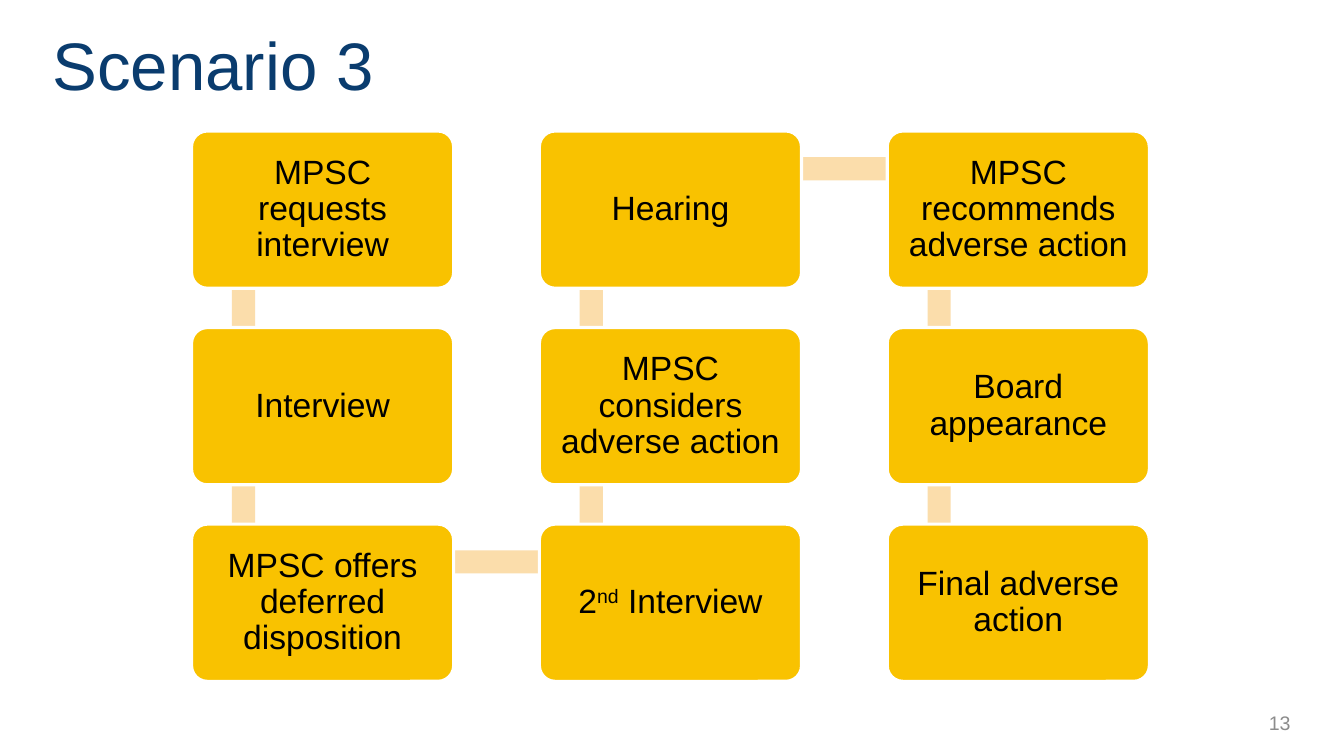
from pptx import Presentation
from pptx.dml.color import RGBColor
from pptx.enum.shapes import MSO_SHAPE
from pptx.enum.text import MSO_ANCHOR, MSO_AUTO_SIZE, PP_ALIGN
from pptx.util import Emu, Pt

RECT, ROUNDED = MSO_SHAPE.RECTANGLE, MSO_SHAPE.ROUNDED_RECTANGLE
LEFT, CENTER, RIGHT = PP_ALIGN.LEFT, PP_ALIGN.CENTER, PP_ALIGN.RIGHT
MIDDLE, NO_FIT = MSO_ANCHOR.MIDDLE, MSO_AUTO_SIZE.NONE

NAVY = RGBColor(0x0A, 0x3C, 0x6E)
GOLD = RGBColor(0xF9, 0xC2, 0x00)
CREAM = RGBColor(0xFB, 0xDD, 0xAB)
GRAY = RGBColor(0x8C, 0x8C, 0x8C)
BLACK = RGBColor(0, 0, 0)
WHITE = RGBColor(0xFF, 0xFF, 0xFF)

EMU_PER_PX = 9144  # 100 px to the inch


def px(n):
    return Emu(n * EMU_PER_PX)


class Deck:
    font = "Arial"

    def __init__(self, width, height):
        self.prs = Presentation()
        self.prs.slide_width, self.prs.slide_height = px(width), px(height)
        self.slide = None

    def add_slide(self):
        self.slide = self.prs.slides.add_slide(self.prs.slide_layouts[5])

    def add_text(self, sp, runs, size, color, align):
        tf = sp.text_frame
        tf.word_wrap, tf.auto_size, tf.vertical_anchor = True, NO_FIT, MIDDLE
        p = tf.paragraphs[0]
        p.alignment = align
        for text, baseline in runs:
            r = p.add_run()
            r.text = text
            r.font.name, r.font.size = self.font, Pt(size)
            r.font.color.rgb = color
            if baseline:
                r._r.get_or_add_rPr().set("baseline", str(baseline * 1000))
        return p

    def title(self, text, x, y, w, h):
        sp = self.slide.shapes.title
        sp.left, sp.top, sp.width, sp.height = map(px, (x, y, w, h))
        self.add_text(sp, [(text, 0)], 48, NAVY, LEFT)

    def label(self, text, x, y, w, h):
        sp = self.slide.shapes.add_textbox(*map(px, (x, y, w, h)))
        self.add_text(sp, [(text, 0)], 14, GRAY, RIGHT)

    def shape(self, kind, x, y, w, h, fill):
        sp = self.slide.shapes.add_shape(kind, *map(px, (x, y, w, h)))
        sp.shadow.inherit = False
        sp.fill.solid()
        sp.fill.fore_color.rgb = fill
        sp.line.fill.background()
        return sp

    def bar(self, x, y, w, h):
        self.shape(RECT, x, y, w, h, CREAM)

    def step(self, runs, x, y, w, h):
        sp = self.shape(ROUNDED, x, y, w, h, GOLD)
        sp.adjustments[0] = 0.1
        sp.line.color.rgb = WHITE
        sp.line.width = Pt(2.25)
        tf = sp.text_frame
        tf.margin_left = tf.margin_right = px(12)
        tf.margin_top = tf.margin_bottom = px(10)
        self.add_text(sp, runs, 24, BLACK, CENTER).line_spacing = 0.9


STEPS = [
    [("MPSC requests interview", 0)],
    [("Interview", 0)],
    [("MPSC offers deferred disposition", 0)],
    [("2", 0), ("nd", 30), (" Interview", 0)],
    [("MPSC considers adverse action", 0)],
    [("Hearing", 0)],
    [("MPSC recommends adverse action", 0)],
    [("Board appearance", 0)],
    [("Final adverse action", 0)],
]
ROWS = 3
GRID_X, GRID_Y = 190, 130
PITCH_X, PITCH_Y = 345, 195
STEP_W, STEP_H = 260, 156
BAR = 23


def step_corner(i):
    """Steps run down one column and up the next."""
    col, row = divmod(i, ROWS)
    if col % 2:
        row = ROWS - 1 - row
    return GRID_X + col * PITCH_X, GRID_Y + row * PITCH_Y


def main():
    deck = Deck(1333, 750)
    deck.add_slide()
    deck.title("Scenario 3", 42, 17, 1274, 93)

    # Bars between consecutive steps, behind the boxes
    corners = [step_corner(i) for i in range(len(STEPS))]
    for (x1, y1), (x2, y2) in zip(corners, corners[1:]):
        if x1 == x2:
            deck.bar(x1 + 40, min(y1, y2) + 38, BAR, PITCH_Y)
        else:
            deck.bar(x1 + 53, y1 + 26, PITCH_X, BAR)

    # Step boxes
    for runs, (x, y) in zip(STEPS, corners):
        deck.step(runs, x, y, STEP_W, STEP_H)

    # Slide number
    deck.label("13", 1064, 697, 226, 40)
    deck.prs.save("out.pptx")


if __name__ == "__main__":
    main()
